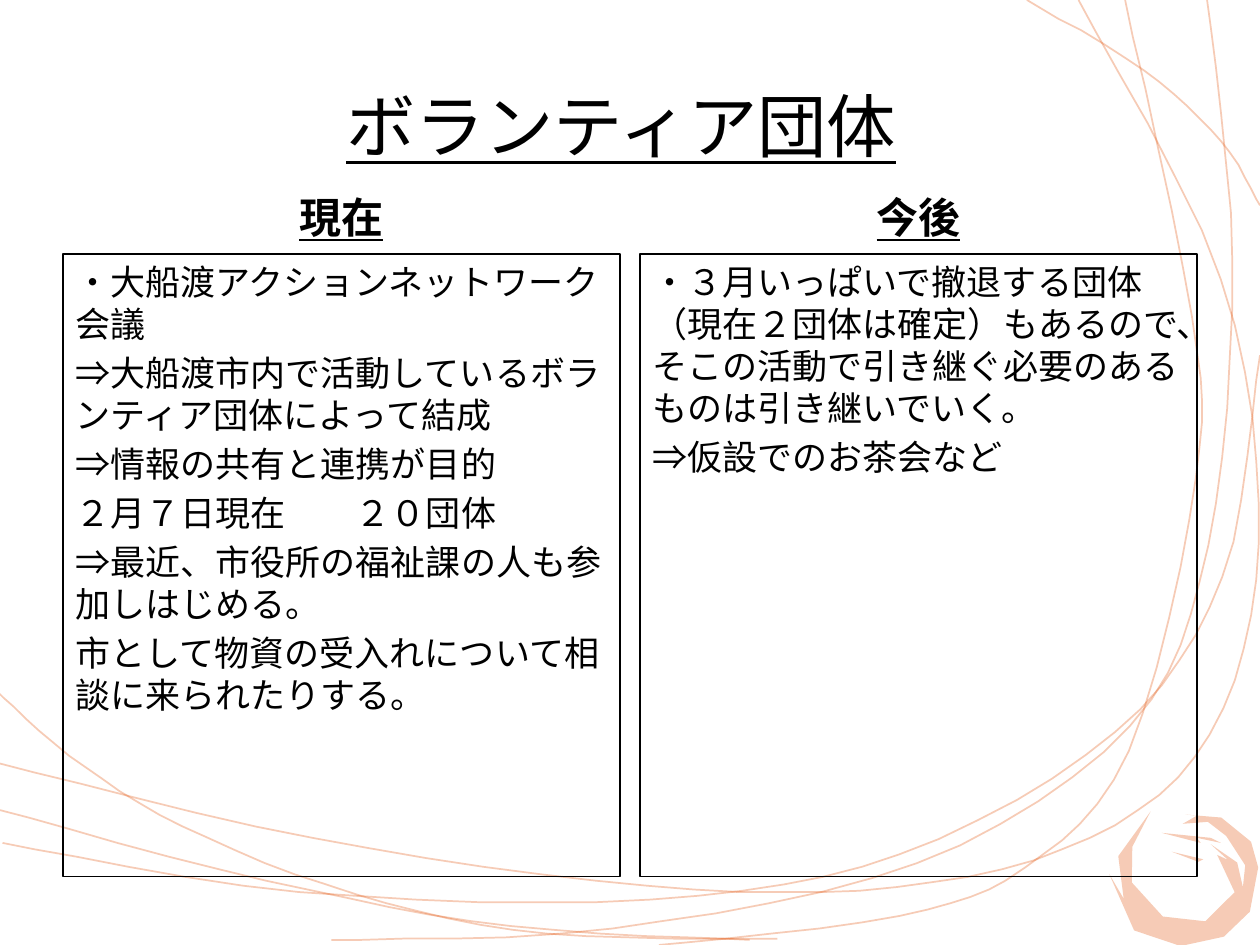
from typing import NamedTuple

from lxml import etree
from pptx import Presentation
from pptx.dml.color import RGBColor
from pptx.enum.text import MSO_ANCHOR, PP_ALIGN
from pptx.oxml.ns import qn
from pptx.util import Inches, Pt

WIDTH, HEIGHT = Inches(10), Inches(7.5)
HUNDREDTH = 9144
STEPS = 6
FONT, INK, ORANGE = "Calibri", "000000", "E3560E"
LEFT, CENTER = PP_ALIGN.LEFT, PP_ALIGN.CENTER
TOP, MIDDLE, BOTTOM = MSO_ANCHOR.TOP, MSO_ANCHOR.MIDDLE, MSO_ANCHOR.BOTTOM

Points = list[tuple[float, float]]


class Area(NamedTuple):
    left: float
    top: float
    width: float
    height: float


class Column(NamedTuple):
    left: float
    heading: str
    lines: list[str]


class Stroke(NamedTuple):
    points: Points
    rotation: float = 0


CURVES: list[Points] = [
    [(-3, 548), (55, 600), (145, 656), (283, 710), (434, 741), (617, 745)],
    [(523, 750), (714, 727), (813, 689), (896, 596), (949, 380), (946, 251), (893, 0)],
    [(0, 606), (248, 665), (514, 703), (712, 704), (865, 665), (960, 583), (999, 431),
     (969, 222), (856, 0)],
    [(2, 669), (237, 708), (516, 714), (714, 678), (885, 581), (970, 458), (1000, 282)],
    [(263, 746), (486, 737), (728, 685), (897, 576), (959, 433), (978, 207), (958, 0)],
    [(815, 0), (908, 56), (969, 112), (1000, 163)],
    [(0, 643), (211, 699), (405, 735), (595, 746)],
]

BRUSH_STROKES = [
    Stroke([(920, 641), (902, 667), (898, 695), (919, 725), (952, 733), (978, 713), (968, 682),
            (976, 687), (964, 673), (983, 690), (985, 710), (989, 693), (977, 668), (964, 655),
            (944, 654), (956, 649), (947, 647), (975, 653), (996, 675), (999, 696), (988, 730),
            (965, 747), (930, 750), (895, 733), (881, 686), (890, 707), (890, 673)],
           rotation=352.7),
    Stroke([(922, 661), (961, 665), (969, 669), (950, 665), (953, 669)]),
    Stroke([(930, 676), (955, 682), (951, 684)]),
]

COLUMNS = [
    Column(0.05, "現在", [
        "・大船渡アクションネットワーク会議",
        "⇒大船渡市内で活動しているボランティア団体によって結成",
        "⇒情報の共有と連携が目的",
        "２月７日現在　　２０団体",
        "⇒最近、市役所の福祉課の人も参加しはじめる。",
        "市として物資の受入れについて相談に来られたりする。",
    ]),
    Column(0.508, "今後", [
        "・３月いっぱいで撤退する団体（現在２団体は確定）もあるので、"
        "そこの活動で引き継ぐ必要のあるものは引き継いでいく。",
        "⇒仮設でのお茶会など",
    ]),
]


def paint(fill, color: str) -> None:
    fill.solid()
    fill.fore_color.rgb = RGBColor.from_string(color)


def fade(shape, percent: int) -> None:
    for node in shape._element.spPr.iter(qn("a:srgbClr")):
        etree.SubElement(node, qn("a:alpha"), val=str(percent * 1000))


def smooth(points: Points) -> Points:
    padded = [points[0], *points, points[-1]]
    curve = [points[0]]
    for before, start, end, after in zip(padded, padded[1:], padded[2:], padded[3:]):
        for step in range(1, STEPS + 1):
            t = step / STEPS
            x, y = (
                b + ((c - a) * t + (2 * a - 5 * b + 4 * c - d) * t ** 2
                     + (3 * b - a - 3 * c + d) * t ** 3) / 2
                for a, b, c, d in zip(before, start, end, after))
            curve.append((x, y))
    return curve


def draw_freeform(slide, points: Points, close: bool):
    builder = slide.shapes.build_freeform(*points[0], scale=HUNDREDTH)
    builder.add_line_segments(points[1:], close=close)
    shape = builder.convert_to_shape()
    shape.shadow.inherit = False
    return shape


def draw_curve(slide, points: Points) -> None:
    shape = draw_freeform(slide, smooth(points), close=False)
    shape.fill.background()
    shape.line.width = Pt(1)
    paint(shape.line.fill, ORANGE)
    fade(shape, 29)


def draw_brush(slide, stroke: Stroke) -> None:
    shape = draw_freeform(slide, stroke.points, close=True)
    shape.rotation = stroke.rotation
    shape.line.fill.background()
    paint(shape.fill, ORANGE)
    fade(shape, 30)


def write(slide, area: Area, lines: list[str], *, size: float, align=LEFT, anchor=TOP,
          bold: bool = False, underline: bool = False, border: bool = False) -> None:
    box = slide.shapes.add_textbox(
        int(area.left * WIDTH), int(area.top * HEIGHT),
        int(area.width * WIDTH), int(area.height * HEIGHT))
    if border:
        paint(box.line.fill, INK)
        box.line.width = Pt(0.75)
    frame = box.text_frame
    frame.word_wrap = True
    frame.vertical_anchor = anchor
    for index, line in enumerate(lines):
        para = frame.paragraphs[0] if index == 0 else frame.add_paragraph()
        para.alignment = align
        if index:
            para.space_before = Pt(size * 0.2)
        span = para.add_run()
        span.text = line
        span.font.name = FONT
        span.font.size = Pt(size)
        span.font.bold = bold
        span.font.underline = underline
        paint(span.font.fill, INK)


def main() -> None:
    deck = Presentation()
    deck.slide_width, deck.slide_height = WIDTH, HEIGHT
    page = deck.slides.add_slide(deck.slide_layouts[6])
    for curve in CURVES:
        draw_curve(page, curve)
    for stroke in BRUSH_STROKES:
        draw_brush(page, stroke)
    write(page, Area(0.043, 0.09, 0.9, 0.083), ["ボランティア団体"],
          size=39.6, align=CENTER, anchor=MIDDLE, underline=True)
    for column in COLUMNS:
        write(page, Area(column.left, 0.196, 0.442, 0.067), [column.heading],
              size=24, align=CENTER, anchor=BOTTOM, bold=True, underline=True)
        write(page, Area(column.left, 0.269, 0.442, 0.659), column.lines, size=20, border=True)
    deck.save("out.pptx")


if __name__ == "__main__":
    main()
